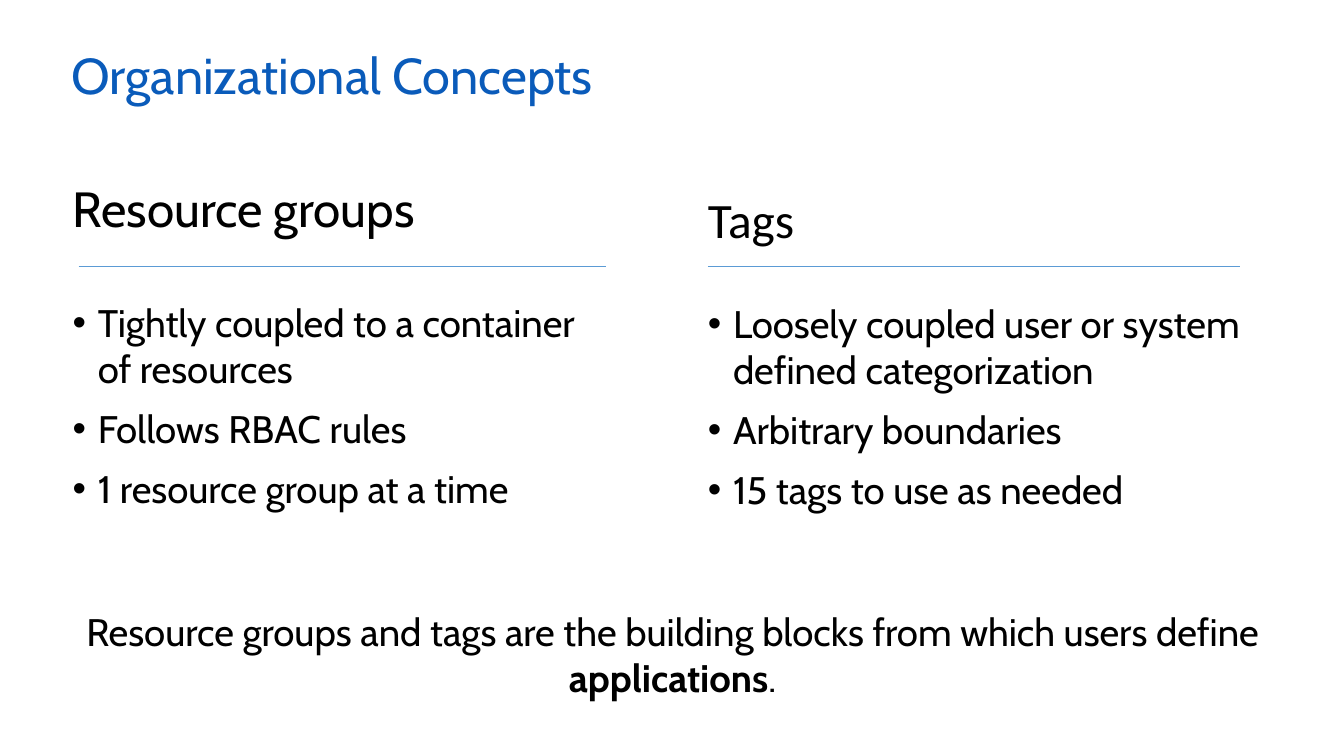
"""Build the slide that compares resource groups with tags."""
from lxml.etree import SubElement
from pptx import Presentation
from pptx.dml.color import RGBColor as RGB
from pptx.enum.shapes import MSO_CONNECTOR as LINK
from pptx.enum.text import MSO_ANCHOR as ANCHOR, MSO_AUTO_SIZE as FIT, PP_ALIGN as ALIGN
from pptx.oxml.ns import qn
from pptx.util import Inches, Pt

BLACK, BLUE, SKY = "000000", "0A5BBA", "5B9BD5"
THIN = (0.1, 0.05)
WIDE = (0.2, 0.16)
HEAD, BODY = 35.3, 27.4


def put(item, vals):
    for name, val in vals.items():
        setattr(item, name, val)


def paint(color, code):
    color.rgb = RGB.from_string(code)


def place(shape, box, pad, anchor=ANCHOR.TOP):
    put(shape, dict(zip(("left", "top", "width", "height"), map(Inches, box))))
    side, edge = map(Inches, pad)
    frame = shape.text_frame
    put(frame, {"margin_left": side, "margin_right": side,
                "margin_top": edge, "margin_bottom": edge,
                "word_wrap": True, "auto_size": FIT.NONE,
                "vertical_anchor": anchor})
    return frame


def write(para, text, size, face="Cabin", code=BLACK, bold=False):
    run = para.add_run()
    run.text = text
    put(run.font, {"size": Pt(size), "name": face, "bold": bold})
    paint(run.font.color, code)


def space(para, before, align=ALIGN.LEFT, line=1.0):
    put(para, {"space_before": Pt(before), "space_after": Pt(0),
               "line_spacing": line, "alignment": align})


def mark(para, sign=None, dent=0.0):
    props = para._p.get_or_add_pPr()
    props.set("marL", str(Inches(dent)))
    props.set("indent", str(-Inches(dent)))
    if sign:
        SubElement(props, qn("a:buFont")).set("typeface", "Arial")
        SubElement(props, qn("a:buChar")).set("char", sign)
    else:
        SubElement(props, qn("a:buNone"))


def fill_list(shape, box, pad, head, face, gap, step, items):
    frame = place(shape, box, pad)
    para = frame.paragraphs[0]
    space(para, 0)
    mark(para)
    write(para, head, HEAD, face)
    for num, item in enumerate(items):
        para = frame.add_paragraph()
        space(para, step if num else gap)
        mark(para, "•", 0.25)
        write(para, item, BODY)


def add_rule(slide, left, right, top):
    rule = slide.shapes.add_connector(
        LINK.STRAIGHT, Inches(left), Inches(top), Inches(right), Inches(top))
    rule.line.width = Pt(0.5)
    paint(rule.line.color, SKY)
    SubElement(rule._element.spPr, qn("a:effectLst"))


def add_title(shape, text):
    para = place(shape, (0.61, 0.37, 11.5, 0.82), THIN, ANCHOR.MIDDLE).paragraphs[0]
    space(para, 0, line=0.9)
    write(para, text, 36, code=BLUE)


def add_note(slide, box, parts):
    shape = slide.shapes.add_textbox(*map(Inches, box))
    para = place(shape, box, WIDE).paragraphs[0]
    space(para, 0, ALIGN.CENTER)
    for text, bold in parts:
        write(para, text, BODY, bold=bold)


def main():
    deck = Presentation()
    put(deck, {"slide_width": Inches(13.33), "slide_height": Inches(7.5)})
    slide = deck.slides.add_slide(deck.slide_layouts[3])
    title, groups, tags = slide.placeholders
    add_title(title, "Organizational Concepts")
    fill_list(groups, (0.62, 1.72, 5.48, 4.4), THIN,
              "Resource groups", "Cabin", 44, 10,
              ["Tightly coupled to a container of resources",
               "Follows RBAC rules",
               "1 resource group at a time"])
    fill_list(tags, (6.82, 1.72, 5.73, 4.44), WIDE,
              "Tags", "Calibri", 37, 9.8,
              ["Loosely coupled user or system defined categorization",
               "Arbitrary boundaries",
               "15 tags to use as needed"])
    add_note(slide, (0.3, 5.87, 12.74, 2.64),
             [("Resource groups and tags are the building blocks "
               "from which users define ", False),
              ("applications", True), (".", False)])
    for left, right in ((0.78, 6.01), (7.02, 12.3)):
        add_rule(slide, left, right, 2.64)
    deck.save("out.pptx")


if __name__ == "__main__":
    main()
